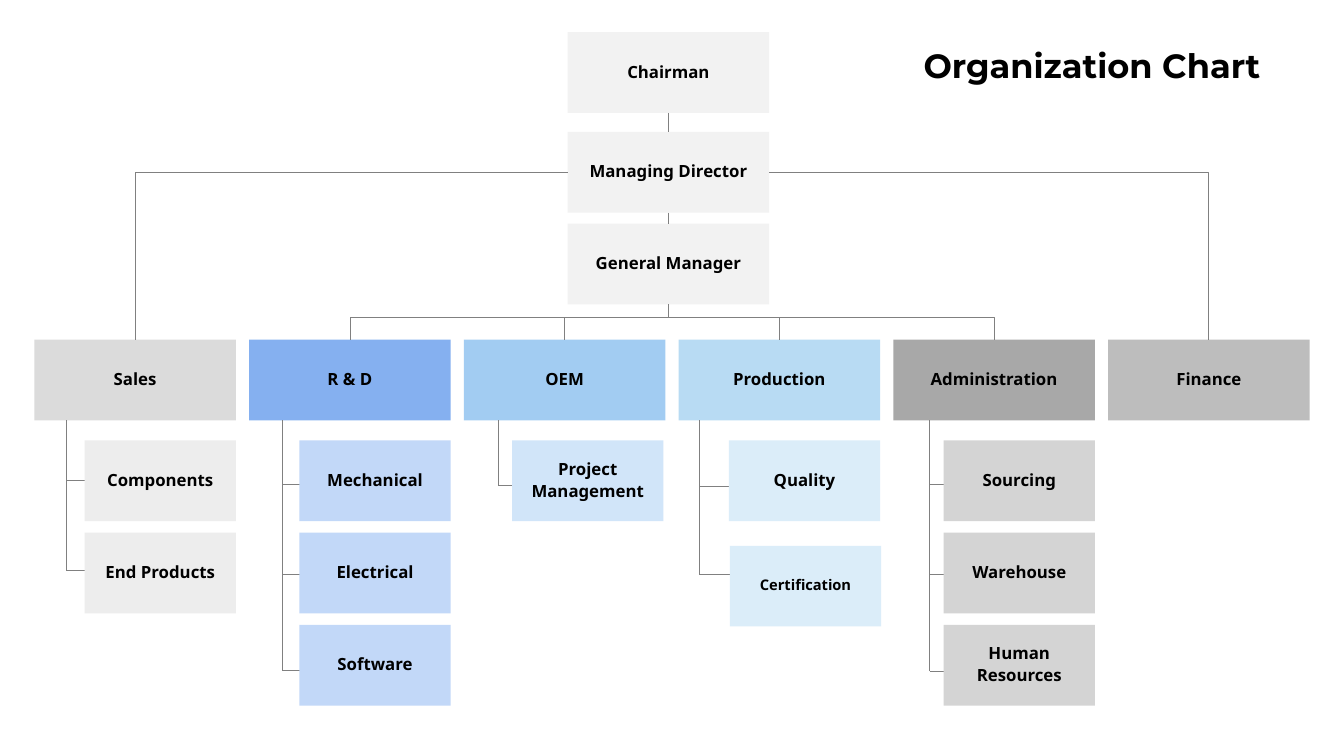
import pptx
import pptx.dml.color
import pptx.enum.shapes
import pptx.enum.text
import pptx.oxml
import pptx.oxml.ns
import pptx.util
from dataclasses import dataclass

RGB = pptx.dml.color.RGBColor.from_string
INCH = pptx.util.Inches
POINT = pptx.util.Pt
KINDS = pptx.enum.shapes.MSO_CONNECTOR
ANCHOR = pptx.enum.text.MSO_ANCHOR
ALIGN = pptx.enum.text.PP_ALIGN
TOP, LEFT, BOTTOM, RIGHT = range(4)


@dataclass(frozen=True)
class Theme:
    ink: str = "000000"
    line: str = "808080"
    leader: str = "F2F2F2"
    title_font: str = "Montserrat"
    body_font: str = "Noto Sans"
    title_size: float = 24
    body_size: float = 12
    small_size: float = 10.5
    line_width: float = 0.5


THEME = Theme()

COLUMN_LEFT, COLUMN_PITCH = 0.34, 2.13
UNIT_WIDTH, TEAM_WIDTH, BOX_HEIGHT = 2, 1.5, 0.8
UNIT_ROW, TEAM_ROW, TEAM_PITCH = 3.37, 4.37, 0.915
LEADER_LEFT = 5.63
BUS_SHARE = 0.362
BRANCH_LENGTH = 0.3

LEADERS = [("Chairman", 0.32), ("Managing Director", 1.31), ("General Manager", 2.22)]

# label, unit fill, team fill, stem offset, branch heights, teams (label, column offset, row offset, size)
UNITS = [
    ("Sales", "DBDBDB", "EDEDED", 0.32, [4.77, 5.66],
     [("Components", 0.5, 0, THEME.body_size), ("End Products", 0.5, 0, THEME.body_size)]),
    ("R & D", "85B0F0", "C2D8F8", 0.33, [4.81, 5.7, 6.65],
     [("Mechanical", 0.5, 0, THEME.body_size), ("Electrical", 0.5, 0, THEME.body_size),
      ("Software", 0.5, 0, THEME.body_size)]),
    ("OEM", "A2CCF2", "D1E5F9", 0.34, [4.82],
     [("Project\nManagement", 0.48, 0, THEME.body_size)]),
    ("Production", "B8DBF3", "DBEDF9", 0.21, [4.83, 5.7],
     [("Quality", 0.5, 0, THEME.body_size), ("Certification", 0.51, 0.13, THEME.small_size)]),
    ("Administration", "A8A8A8", "D4D4D4", 0.36, [4.81, 5.7, 6.66],
     [("Sourcing", 0.5, 0, THEME.body_size), ("Warehouse", 0.5, 0, THEME.body_size),
      ("Human\nResources", 0.5, 0, THEME.body_size)]),
    ("Finance", "BDBDBD", "BDBDBD", 0, [], []),
]


def assign(target, values):
    for name, value in values.items():
        setattr(target, name, value)


def column_left(index):
    return COLUMN_LEFT + index * COLUMN_PITCH


def team_top(index):
    return TEAM_ROW + index * TEAM_PITCH


def style_font(font, name, size):
    assign(font, {"name": name, "size": POINT(size), "bold": True})
    font.color.rgb = RGB(THEME.ink)


def add_title(page, text):
    title = page.shapes.title
    assign(title, {"left": INCH(9.06), "top": INCH(0.21),
                   "width": INCH(3.88), "height": INCH(0.93)})
    frame = title.text_frame
    assign(frame, {"text": text, "word_wrap": True, "vertical_anchor": ANCHOR.MIDDLE,
                   "auto_size": pptx.enum.text.MSO_AUTO_SIZE.NONE})
    para = frame.paragraphs[0]
    assign(para, {"alignment": ALIGN.LEFT, "line_spacing": 0.9})
    style_font(para.runs[0].font, THEME.title_font, THEME.title_size)


def add_box(page, text, left, top, width, fill, size=THEME.body_size):
    box = page.shapes.add_shape(pptx.enum.shapes.MSO_SHAPE.RECTANGLE,
                                INCH(left), INCH(top), INCH(width), INCH(BOX_HEIGHT))
    box.shadow.inherit = False
    box.fill.solid()
    box.fill.fore_color.rgb = RGB(fill)
    box.line.fill.background()
    frame = box.text_frame
    assign(frame, {"text": text, "word_wrap": True, "vertical_anchor": ANCHOR.MIDDLE,
                   "margin_left": INCH(0.01), "margin_right": INCH(0.01),
                   "margin_top": INCH(0.04), "margin_bottom": INCH(0.04)})
    for para in frame.paragraphs:
        assign(para, {"alignment": ALIGN.CENTER, "line_spacing": 0.9,
                      "space_after": POINT(2.5)})
        for span in para.runs:
            style_font(span.font, THEME.body_font, size)
    return box


def add_line(page, start=(0, 0), end=(0, 0), kind=KINDS.STRAIGHT):
    line = page.shapes.add_connector(kind, *(INCH(value) for value in (*start, *end)))
    line.line.color.rgb = RGB(THEME.line)
    line.line.width = POINT(THEME.line_width)
    line._element.spPr.append(pptx.oxml.parse_xml(
        f"<a:effectLst {pptx.oxml.ns.nsdecls('a')}/>"))
    return line


def join(page, source, source_side, target, target_side, kind=KINDS.STRAIGHT):
    line = add_line(page, kind=kind)
    line.begin_connect(source, source_side)
    line.end_connect(target, target_side)
    return line


def join_corner(page, source, side, target):
    line = join(page, source, side, target, TOP, KINDS.ELBOW)
    line._element.spPr.prstGeom.set("prst", "bentConnector2")


def join_bus(page, source, target):
    line = join(page, source, BOTTOM, target, TOP, KINDS.ELBOW)
    leftward = line.end_x < line.begin_x
    center_x, center_y = line.left + line.width // 2, line.top + line.height // 2
    width, height = line.height, line.width
    assign(line, {"left": center_x - width // 2, "top": center_y - height // 2,
                  "width": width, "height": height})
    properties = line._element.spPr
    assign(properties.xfrm, {"rot": 90 if leftward else 270, "flipH": not leftward})
    guides = properties.prstGeom.get_or_add_avLst()
    guides.append(pptx.oxml.parse_xml(
        f'<a:gd {pptx.oxml.ns.nsdecls("a")} name="adj1" fmla="val {round(BUS_SHARE * 100000)}"/>'))


def add_unit(page, index, unit):
    label, unit_fill, team_fill, stem_offset, branches, teams = unit
    left = column_left(index)
    box = add_box(page, label, left, UNIT_ROW, UNIT_WIDTH, unit_fill)
    stem = left + stem_offset
    if branches:
        add_line(page, (stem, UNIT_ROW + BOX_HEIGHT), (stem, branches[-1]))
    for height in branches:
        add_line(page, (stem, height), (stem + BRANCH_LENGTH, height))
    for row, (text, shift, drop, size) in enumerate(teams):
        add_box(page, text, left + shift, team_top(row) + drop, TEAM_WIDTH, team_fill, size)
    return box


def main():
    deck = pptx.Presentation()
    assign(deck, {"slide_width": INCH(13.33), "slide_height": INCH(7.5)})
    page = deck.slides.add_slide(deck.slide_layouts[5])
    add_title(page, "Organization Chart")

    chairman, director, manager = [
        add_box(page, label, LEADER_LEFT, top, UNIT_WIDTH, THEME.leader)
        for label, top in LEADERS]
    units = [add_unit(page, index, unit) for index, unit in enumerate(UNITS)]
    sales, research, oem, production, administration, finance = units

    join(page, chairman, BOTTOM, director, TOP)
    join(page, director, BOTTOM, manager, TOP)
    join_corner(page, director, LEFT, sales)
    join_corner(page, director, RIGHT, finance)
    for unit in (research, administration):
        join_bus(page, manager, unit)

    manager_bottom = LEADERS[-1][1] + BOX_HEIGHT
    bus = manager_bottom + (UNIT_ROW - manager_bottom) * BUS_SHARE
    for index, unit in ((2, oem), (3, production)):
        middle = column_left(index) + UNIT_WIDTH / 2
        drop = add_line(page, (middle, bus), (middle, UNIT_ROW))
        drop.end_connect(unit, TOP)

    deck.save("out.pptx")


if __name__ == "__main__":
    main()
